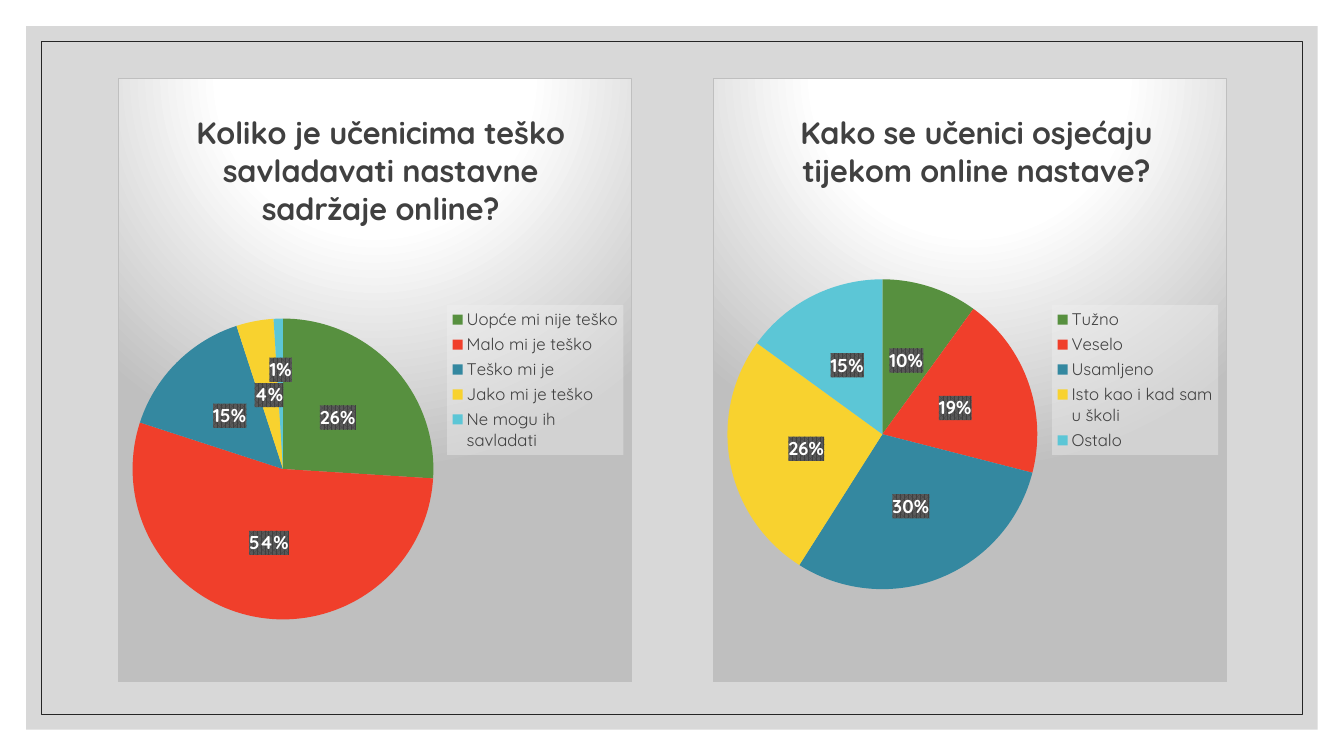
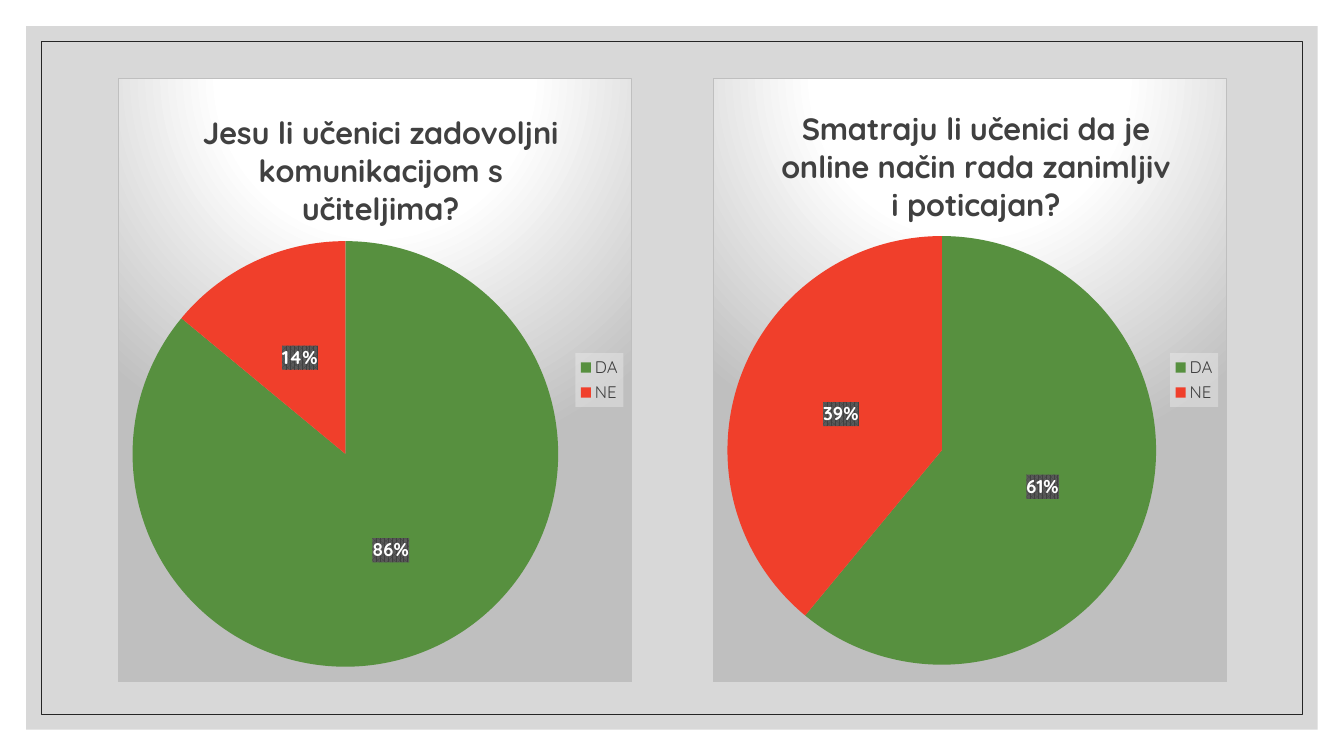
from copy import deepcopy

from pptx import Presentation
from pptx.chart.data import CategoryChartData
from pptx.dml.color import RGBColor
from pptx.enum.chart import XL_CHART_TYPE, XL_LABEL_POSITION, XL_LEGEND_POSITION
from pptx.enum.shapes import MSO_SHAPE
from pptx.oxml import parse_xml
from pptx.oxml.ns import qn
from pptx.util import Inches, Pt

PIE = XL_CHART_TYPE.PIE
CENTER = XL_LABEL_POSITION.CENTER
RIGHT = XL_LEGEND_POSITION.RIGHT
RECT = MSO_SHAPE.RECTANGLE

WIDE, HIGH = 13.33, 7.5
LEFT, TOP, STEP = 1.17, 0.77, 5.9
CARD_W, CARD_H = 5.1, 6
PIE_LEFT = 0.14
FACE = "Quicksand"
COLS = {
    "white": "FFFFFF", "grey": "BFBFBF", "ink": "262626", "text": "404040",
    "mid": "595959", "pale": "F2F2F2", "black": "000000",
}
HUES = ["57903F", "F03F2B", "3488A0", "F8D22F", "5CC6D6"]
FONTS = {
    "base": {"size": Pt(10), "name": FACE, "color": "black"},
    "title": {"size": Pt(22), "name": FACE, "bold": True, "color": "text"},
    "key": {"size": Pt(12), "name": FACE, "color": "text"},
    "label": {"size": Pt(13.3), "name": FACE, "bold": True, "color": "white"},
}
LABELS = {
    "show_percentage": True, "show_value": False, "number_format": "0%",
    "number_format_is_linked": False, "position": CENTER,
}
LEGEND = {"position": RIGHT, "include_in_layout": False}
SPACE = (
    'xmlns:c="http://schemas.openxmlformats.org/drawingml/2006/chart" '
    'xmlns:a="http://schemas.openxmlformats.org/drawingml/2006/main"'
)
YES_NO = ["DA", "NE"]
SLIDES = [
    [
        {"title": "Koliko je učenicima teško savladavati nastavne sadržaje online?",
         "cats": ["Uopće mi nije teško", "Malo mi je teško", "Teško mi je",
                  "Jako mi je teško", "Ne mogu ih savladati"],
         "vals": [26, 54, 15, 4, 1], "head": (0.72, 0.27), "pie": (2.39, 2.99),
         "shift": (4, -0.04)},
        {"title": "Kako se učenici osjećaju tijekom online nastave?",
         "cats": ["Tužno", "Veselo", "Usamljeno", "Isto kao i kad sam u školi", "Ostalo"],
         "vals": [10, 19, 30, 26, 15], "head": (0.81, 0.27), "pie": (2, 3.08)},
    ],
    [
        {"title": "Jesu li učenici zadovoljni komunikacijom s učiteljima?",
         "cats": YES_NO, "vals": [86, 14], "head": (0.78, 0.27), "pie": (1.62, 4.23)},
        {"title": "Smatraju li učenici da je online način rada zanimljiv i poticajan?",
         "cats": YES_NO, "vals": [61, 39], "head": (0.62, 0.23), "pie": (1.57, 4.26)},
    ],
]


def shade(name):
    """Give the named colour."""
    return RGBColor.from_string(COLS[name])


def apply(item, form):
    """Set each format value on the item."""
    for key, val in form.items():
        if key == "color":
            item.color.rgb = shade(val)
        else:
            setattr(item, key, val)


def tint(name, alpha=100):
    """Give the XML of a colour with its opacity in percent."""
    return f'<a:srgbClr val="{COLS[name]}"><a:alpha val="{alpha * 1000}"/></a:srgbClr>'


def props(body):
    """Give a chart shape property element."""
    return parse_xml(f"<c:spPr {SPACE}>{body}</c:spPr>")


def place(x, y, w=0, h=0, mode='<c:xMode val="edge"/><c:yMode val="edge"/>'):
    """Give a manual layout in shares of the chart."""
    inner = '<c:layoutTarget val="inner"/>' if w else ""
    size = f'<c:w val="{w:.4f}"/><c:h val="{h:.4f}"/>' if w else ""
    return parse_xml(
        f"<c:layout {SPACE}><c:manualLayout>{inner}{mode}"
        f'<c:x val="{x:.4f}"/><c:y val="{y:.4f}"/>{size}</c:manualLayout></c:layout>')


def clear(node):
    """Drop the present layout of a chart part."""
    for old in node.findall(qn("c:layout")):
        node.remove(old)


def frame(slide, layout):
    """Put the grey band and the thin outline on the layout."""
    for edge in (0.26, 0.41):
        box = slide.shapes.add_shape(
            RECT, Inches(edge), Inches(edge),
            Inches(WIDE - 2 * edge), Inches(HIGH - 2 * edge))
        box.shadow.inherit = False
        if edge < 0.4:
            box.fill.solid()
            box.fill.fore_color.rgb = shade("grey")
            tone = box.fill._xPr.find(".//" + qn("a:srgbClr"))
            tone.append(parse_xml(f'<a:alpha {SPACE} val="60000"/>'))
            box.line.fill.background()
        else:
            box.fill.background()
            apply(box.line, {"color": "ink", "width": Pt(0.5)})
        layout.shapes._spTree.append(box._element)


def back(chart):
    """Fill the card with a round glow and a thin border."""
    stops = "".join(
        f'<a:gs pos="{pos * 1000}">{tint(name)}</a:gs>'
        for pos, name in ((0, "white"), (39, "white"), (100, "grey")))
    body = (
        f'<a:gradFill><a:gsLst>{stops}</a:gsLst><a:path path="circle">'
        '<a:fillToRect l="50000" t="-80000" r="50000" b="180000"/></a:path></a:gradFill>'
        f'<a:ln w="{Pt(0.75)}"><a:solidFill>{tint("grey")}</a:solidFill></a:ln>')
    chart.element.find(qn("c:chart")).addnext(props(body))


def head(chart, text, spot):
    """Write the chart title at its spot."""
    chart.has_title = True
    para = chart.chart_title.text_frame.paragraphs[0]
    run = para.add_run()
    run.text = text
    apply(run.font, FONTS["title"])
    chart.chart_title.include_in_layout = False
    node = chart.element.find(".//" + qn("c:title"))
    clear(node)
    node.find(qn("c:tx")).addnext(place(spot[0] / CARD_W, spot[1] / CARD_H))


def legend(chart):
    """Add the key on a pale see-through plate."""
    chart.has_legend = True
    apply(chart.legend, LEGEND)
    apply(chart.legend.font, FONTS["key"])
    plate = props(f'<a:solidFill>{tint("pale", 39)}</a:solidFill>')
    chart.element.find(".//" + qn("c:legend")).find(qn("c:txPr")).addprevious(plate)


def label(series, shift):
    """Show shares on dark plates and move one of them if asked."""
    tags = series.data_labels
    apply(tags, LABELS)
    apply(tags.font, FONTS["label"])
    node = series._element.find(qn("c:dLbls"))
    node.find(qn("c:txPr")).addprevious(props(
        f'<a:pattFill prst="pct75"><a:fgClr>{tint("text")}</a:fgClr>'
        f'<a:bgClr>{tint("mid")}</a:bgClr></a:pattFill>'))
    if shift:
        spot, rise = shift
        one = parse_xml(f'<c:dLbl {SPACE}><c:idx val="{spot}"/></c:dLbl>')
        one.append(place(0, rise, mode=""))
        for part in node:
            if part.tag != qn("c:showLeaderLines"):
                one.append(deepcopy(part))
        node.insert(0, one)


def card(slide, col, info):
    """Draw one pie card in its column."""
    data = CategoryChartData()
    data.categories = info["cats"]
    data.add_series(info["title"], info["vals"])
    chart = slide.shapes.add_chart(
        PIE, Inches(LEFT + col * STEP), Inches(TOP),
        Inches(CARD_W), Inches(CARD_H), data).chart
    apply(chart.font, FONTS["base"])
    back(chart)
    head(chart, info["title"], info["head"])
    legend(chart)
    plot = chart.plots[0]
    plot.vary_by_categories = True
    series = plot.series[0]
    for spot in range(len(info["vals"])):
        form = series.points[spot].format
        form.fill.solid()
        form.fill.fore_color.rgb = RGBColor.from_string(HUES[spot])
        form.line.fill.background()
    label(series, info.get("shift"))
    top, size = info["pie"]
    area = chart.element.find(".//" + qn("c:plotArea"))
    clear(area)
    area.insert(0, place(PIE_LEFT / CARD_W, top / CARD_H, size / CARD_W, size / CARD_H))


def main():
    """Build the slides and save them."""
    deck = Presentation()
    deck.slide_width, deck.slide_height = Inches(WIDE), Inches(HIGH)
    blank = deck.slide_layouts[6]
    for page, cards in enumerate(SLIDES):
        slide = deck.slides.add_slide(blank)
        if page == 0:
            frame(slide, blank)
        for col, info in enumerate(cards):
            card(slide, col, info)
    deck.save("out.pptx")


if __name__ == "__main__":
    main()
